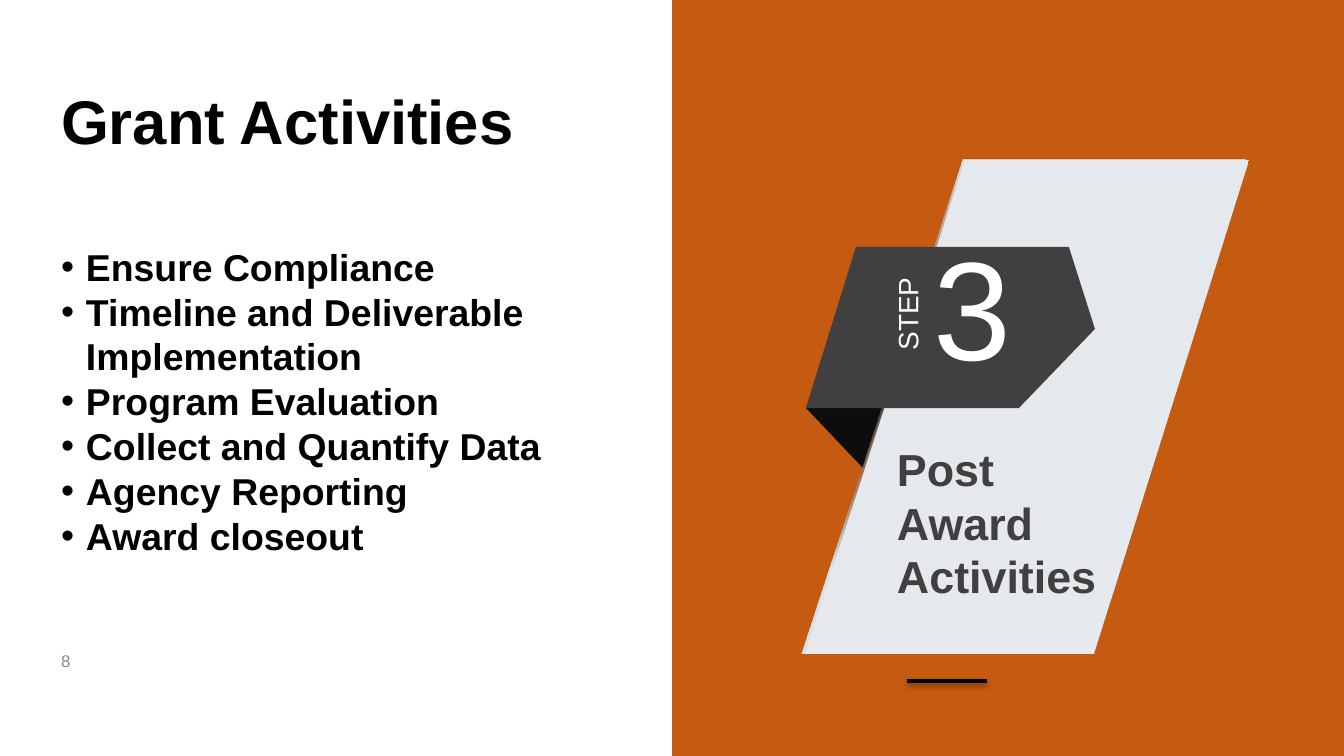
import pptx
import pptx.util
import pptx.dml.color
import pptx.enum.shapes
import pptx.enum.text
import pptx.oxml
import pptx.oxml.ns

RGBColor = pptx.dml.color.RGBColor
ANCHOR = pptx.enum.text.MSO_ANCHOR
ALIGN = pptx.enum.text.PP_ALIGN
Pt = pptx.util.Pt

# Content
TITLE = "Grant Activities"
ACTIVITIES = [
    "Ensure Compliance",
    "Timeline and Deliverable Implementation",
    "Program Evaluation",
    "Collect and Quantify Data",
    "Agency Reporting",
    "Award closeout",
]
PAGE_NUMBER = "8"
STEP_WORD, STEP_NUMBER = "STEP", "3"
STEP_LABEL = "Post Award Activities"

# Style
FONT = "Arial"
ORANGE = RGBColor(0xC5, 0x5A, 0x11)
WHITE = RGBColor(0xFF, 0xFF, 0xFF)
BLACK = RGBColor(0, 0, 0)
CHARCOAL = RGBColor(0x40, 0x40, 0x40)
NEAR_BLACK = RGBColor(0x0D, 0x0D, 0x0D)
GRAY = RGBColor(0x88, 0x88, 0x88)
PALE, MIST, SHADE = (RGBColor(0xE6, 0xE9, 0xEE), RGBColor(0xE5, 0xE8, 0xED),
                     RGBColor(0xDC, 0xE1, 0xE7))
MID_GRAY = RGBColor(0x80, 0x80, 0x80)
LINE_HEIGHT = 1.2  # points of line height per point of text

# Geometry in px
WIDTH, HEIGHT = 1344, 756
PX = 914400 / 134.4
LEFT, COLUMN = 52, 536
INSETS = (9, 5, 9, 5)
INDENT = 25
FOLD = [(863, 468), (884, 408), (806, 408)]
CARD_EDGE = [(962, 160), (1245, 160), (1090, 653), (801, 653)]
CARD = [(965, 160), (1249, 160), (1094, 654), (805, 654)]
TAG = [(806, 408), (1019, 408), (1095, 329), (1069, 247), (856, 247)]
# Gradient stops: position %, colour, opacity %
EDGE_STOPS = [(0, SHADE, 100), (34, MID_GRAY, 45), (63, MID_GRAY, 64), (82, SHADE, 100)]
CARD_STOPS = [(0, PALE, 100), (11, MIST, 100), (100, MIST, 100)]


def px(value):
    return round(value * PX)


def place(shape, left, top, width, height):
    shape.left, shape.top = px(left), px(top)
    shape.width, shape.height = px(width), px(height)


def set_frame(shape, insets, anchor, wrap=True):
    frame = shape.text_frame
    frame.word_wrap = wrap
    frame.auto_size = pptx.enum.text.MSO_AUTO_SIZE.NONE
    frame.vertical_anchor = anchor
    (frame.margin_left, frame.margin_top,
     frame.margin_right, frame.margin_bottom) = map(px, insets)
    return frame


def style(paragraph, size, color, bold=False, align=ALIGN.LEFT, spacing=None):
    paragraph.alignment = align
    paragraph.space_before = paragraph.space_after = Pt(0)
    if spacing:
        paragraph.line_spacing = spacing
    for run in paragraph.runs:
        font = run.font
        font.name, font.size, font.bold = FONT, Pt(size), bold
        font.color.rgb = color


def add_text(shapes, text, box, size, color, insets, anchor, wrap=True, **options):
    shape = shapes.add_textbox(0, 0, 0, 0)
    place(shape, *box)
    frame = set_frame(shape, insets, anchor, wrap)
    frame.text = text
    style(frame.paragraphs[0], size, color, **options)
    return shape


def paint(shape, color):
    shape.shadow.inherit = False
    shape.fill.solid()
    shape.fill.fore_color.rgb = color
    shape.line.fill.background()


def add_outline(shapes, points, color):
    builder = shapes.build_freeform(*points[0], scale=PX)
    builder.add_line_segments(points[1:], close=True)
    shape = builder.convert_to_shape()
    paint(shape, color)
    return shape


def set_gradient(shape, stops, angle):
    stop_xml = "".join(
        f'<a:gs pos="{position * 1000}"><a:srgbClr val="{color}">'
        f'<a:alpha val="{opacity * 1000}"/></a:srgbClr></a:gs>'
        for position, color, opacity in stops)
    gradient = pptx.oxml.parse_xml(
        f'<a:gradFill {pptx.oxml.ns.nsdecls("a")} rotWithShape="1"><a:gsLst>{stop_xml}</a:gsLst>'
        f'<a:lin ang="{angle * 60000}" scaled="0"/></a:gradFill>')
    properties = shape.element.spPr
    properties.replace(properties.find(pptx.oxml.ns.qn("a:solidFill")), gradient)


presentation = pptx.Presentation()
presentation.slide_width, presentation.slide_height = px(WIDTH), px(HEIGHT)
slide = presentation.slides.add_slide(presentation.slide_layouts[1])
slide.background.fill.solid()
slide.background.fill.fore_color.rgb = ORANGE

# White left half, behind the placeholders
panel = slide.shapes.add_shape(pptx.enum.shapes.MSO_SHAPE.RECTANGLE,
                               0, 0, px(WIDTH / 2), px(HEIGHT))
paint(panel, WHITE)
slide.shapes.element.insert(2, panel.element)

# Page number
add_text(slide.shapes, PAGE_NUMBER, (LEFT, 641, 302, 40), 9, GRAY, INSETS, ANCHOR.MIDDLE)

# Title
title = slide.shapes.title
place(title, LEFT, 60, COLUMN, 129)
title_frame = set_frame(title, INSETS, ANCHOR.MIDDLE)
title_frame.text = TITLE
style(title_frame.paragraphs[0], 33, BLACK, bold=True, spacing=0.9)

# Bulleted activities
body = slide.placeholders[1]
place(body, LEFT, 239, COLUMN, 415)
body_frame = set_frame(body, INSETS, ANCHOR.TOP)
body_frame.text = "\n".join(ACTIVITIES)
for paragraph in body_frame.paragraphs:
    style(paragraph, 20, BLACK, bold=True, spacing=Pt(20 * LINE_HEIGHT))
    properties = paragraph._p.get_or_add_pPr()
    properties.set("marL", str(px(INDENT)))
    properties.set("indent", str(-px(INDENT)))
    for bullet in ('<a:buFont {} typeface="Arial"/>', '<a:buChar {} char="•"/>'):
        properties.append(pptx.oxml.parse_xml(bullet.format(pptx.oxml.ns.nsdecls("a"))))

# Step card: fold, card with its edge, tag
step = slide.shapes.add_group_shape().shapes
add_outline(step, FOLD, NEAR_BLACK)
set_gradient(add_outline(step, CARD_EDGE, SHADE), EDGE_STOPS, 90)
set_gradient(add_outline(step, CARD, MIST), CARD_STOPS, 270)
add_outline(step, TAG, CHARCOAL)

# Short rule with a soft shadow
rule = step.add_connector(pptx.enum.shapes.MSO_CONNECTOR.STRAIGHT,
                          px(907), px(681), px(987), px(681))
rule.line.color.rgb = BLACK
rule.line.width = Pt(2)
rule.element.spPr.append(pptx.oxml.parse_xml(
    f'<a:effectLst {pptx.oxml.ns.nsdecls("a")}>'
    f'<a:outerShdw blurRad="{Pt(3.1)}" dist="{Pt(1.6)}" dir="5400000" rotWithShape="0">'
    f'<a:srgbClr val="{BLACK}"><a:alpha val="38000"/></a:srgbClr></a:outerShdw></a:effectLst>'))

# Step texts
add_text(step, STEP_LABEL, (884, 434, 242, 176), 24, CHARCOAL, (13, 7, 13, 7), ANCHOR.BOTTOM,
         bold=True, spacing=Pt(24 * LINE_HEIGHT))
add_text(step, STEP_NUMBER, (886, 220, 172, 169), 75, WHITE, (0, 0, 0, 0), ANCHOR.BOTTOM,
         align=ALIGN.CENTER)
step_word = add_text(step, STEP_WORD, (870, 297, 74, 34), 15, WHITE, (0, 0, 0, 0),
                     ANCHOR.BOTTOM, wrap=False, align=ALIGN.CENTER)
step_word.rotation = 270

presentation.save("out.pptx")
